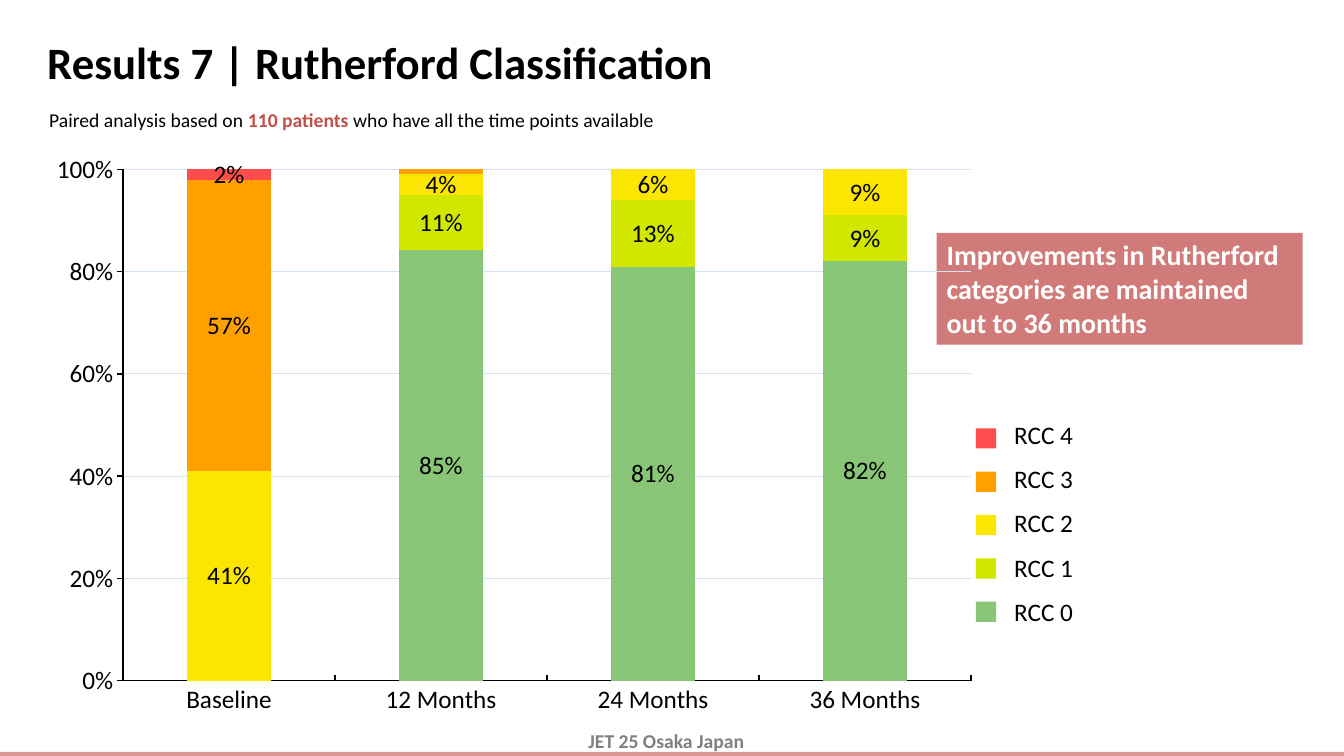
from dataclasses import dataclass

from lxml.etree import SubElement
from pptx import Presentation
from pptx.chart.data import CategoryChartData
from pptx.dml.color import RGBColor
from pptx.enum.chart import XL_CHART_TYPE, XL_TICK_MARK
from pptx.enum.shapes import MSO_SHAPE
from pptx.enum.text import MSO_ANCHOR, PP_ALIGN
from pptx.oxml import parse_xml
from pptx.oxml.ns import nsdecls, qn
from pptx.util import Inches, Pt

FONT = "Calibri"
BLACK = "000000"
CATEGORIES = ["Baseline", "12 Months", "24 Months", "36 Months"]
SMALLEST_LABEL = 0.02  # smaller shares carry no label


@dataclass
class RutherfordClass:
    label: str
    color: str
    shares: tuple[float, ...]


CLASSES = [
    RutherfordClass("RCC 0", "89C576", (0, 0.85, 0.81, 0.82)),
    RutherfordClass("RCC 1", "D1E700", (0, 0.11, 0.13, 0.09)),
    RutherfordClass("RCC 2", "FAE600", (0.41, 0.04, 0.06, 0.09)),
    RutherfordClass("RCC 3", "FF9F00", (0.57, 0.01, 0, 0)),
    RutherfordClass("RCC 4", "FF4C4C", (0.02, 0, 0, 0)),
]


def rgb(color: str) -> RGBColor:
    return RGBColor.from_string(color)


def style(font, size: float, color: str = BLACK, bold: bool = False) -> None:
    font.name, font.size, font.bold = FONT, Pt(size), bold
    font.color.rgb = rgb(color)


def add_rect(s, x: float, y: float, w: float, h: float, color: str):
    sp = s.shapes.add_shape(MSO_SHAPE.RECTANGLE, Inches(x), Inches(y), Inches(w), Inches(h))
    sp.shadow.inherit = False
    sp.fill.solid()
    sp.fill.fore_color.rgb = rgb(color)
    sp.line.fill.background()
    return sp


def add_text(s, x: float, y: float, w: float, h: float, lines: list[str], size: float,
             color: str = BLACK, bold: bool = False, wrap: bool = True):
    tf = s.shapes.add_textbox(Inches(x), Inches(y), Inches(w), Inches(h)).text_frame
    tf.word_wrap = wrap
    fill_text(tf, lines, size, color, bold)
    return tf


def fill_text(tf, lines: list[str], size: float, color: str, bold: bool) -> None:
    tf.text = "\n".join(lines)
    for p in tf.paragraphs:
        p.alignment = PP_ALIGN.LEFT
        style(p.font, size, color, bold)


def set_plot_area(chart, **fractions: float) -> None:
    """Fix the inner plot area as fractions of the chart frame."""
    plot_area = chart.plots[0]._element.getparent()
    for old in plot_area.findall(qn("c:layout")):
        plot_area.remove(old)
    layout = parse_xml(f"<c:layout {nsdecls('c')}/>")
    manual = SubElement(layout, qn("c:manualLayout"))
    settings = {"layoutTarget": "inner", "xMode": "edge", "yMode": "edge", **fractions}
    for name, value in settings.items():
        SubElement(manual, qn(f"c:{name}")).set("val", str(value))
    plot_area.insert(0, layout)


def label_series(series, shares: tuple[float, ...]) -> None:
    labels = series.data_labels
    labels.show_value = True
    labels.number_format, labels.number_format_is_linked = "0%", False
    style(labels.font, 18)
    hidden = [i for i, share in enumerate(shares) if share < SMALLEST_LABEL]
    for position, i in enumerate(hidden):
        labels._element.insert(position, parse_xml(
            f'<c:dLbl {nsdecls("c")}><c:idx val="{i}"/><c:delete val="1"/></c:dLbl>'))


def add_rutherford_chart(s) -> None:
    data = CategoryChartData(number_format="0%")
    data.categories = CATEGORIES
    for rcc in CLASSES:
        data.add_series(rcc.label, rcc.shares)
    chart = s.shapes.add_chart(XL_CHART_TYPE.COLUMN_STACKED_100, Inches(0.37), Inches(1.39),
                               Inches(9.45), Inches(5.83), data).chart
    chart.has_title = chart.has_legend = False
    style(chart.font, 18)
    set_plot_area(chart, x=0.09, y=0.05, w=0.89, h=0.87)

    plot = chart.plots[0]
    plot.gap_width, plot.overlap, plot.vary_by_categories = 150, 100, False
    for series, rcc in zip(plot.series, CLASSES):
        series.format.fill.solid()
        series.format.fill.fore_color.rgb = rgb(rcc.color)
        label_series(series, rcc.shares)

    ticks = [(chart.category_axis, XL_TICK_MARK.INSIDE), (chart.value_axis, XL_TICK_MARK.OUTSIDE)]
    for axis, tick in ticks:
        axis.major_tick_mark, axis.minor_tick_mark = tick, XL_TICK_MARK.NONE
        axis.format.line.color.rgb = rgb(BLACK)
        axis.format.line.width = Pt(1)
        style(axis.tick_labels.font, 18)

    axis = chart.value_axis
    axis.minimum_scale, axis.maximum_scale, axis.major_unit = 0, 1, 0.2
    axis.tick_labels.number_format = "0%"
    axis.tick_labels.number_format_is_linked = False
    axis.has_major_gridlines = True
    axis.major_gridlines.format.line.color.rgb = rgb("D4E3F4")
    axis.major_gridlines.format.line.width = Pt(0.75)


def main() -> None:
    prs = Presentation()
    prs.slide_width, prs.slide_height = Inches(13.33), Inches(7.5)
    s = prs.slides.add_slide(prs.slide_layouts[6])

    # Footer
    add_rect(s, 0, 7.46, 13.33, 0.04, "D99694")
    tf = add_text(s, 5.73, 7.18, 1.76, 0.34, ["JET 25 Osaka Japan"], 14, "808080", True, False)
    tf.paragraphs[0].alignment = PP_ALIGN.CENTER

    # Title and subtitle
    add_text(s, 0.37, 0.3, 12.6, 0.94, ["Results 7 | Rutherford Classification"], 32, bold=True)
    tf = add_text(s, 0.39, 1.02, 8.44, 0.34, ["Paired analysis based on "], 14)
    p = tf.paragraphs[0]
    r = p.add_run()
    r.text = "110 patients "
    r.font.bold, r.font.color.rgb = True, rgb("C1504C")
    p.add_run().text = "who have all the time points available"

    # Legend, top class first
    legend = CLASSES[::-1]
    tf = add_text(s, 9.96, 4.11, 0.79, 2.18, [rcc.label for rcc in legend], 18, wrap=False)
    for p in tf.paragraphs:
        p.space_before = p.space_after = Pt(5)
    for i, rcc in enumerate(legend):
        add_rect(s, 9.68, 4.25 + 0.43 * i, 0.2, 0.2, rcc.color)

    # Key message
    tf = add_rect(s, 9.29, 2.31, 3.63, 1.11, "D07B79").text_frame
    tf.word_wrap, tf.vertical_anchor = True, MSO_ANCHOR.TOP
    fill_text(tf, ["Improvements in Rutherford categories are maintained", "out to 36 months"],
              20, "FFFFFF", True)

    # Chart
    add_rutherford_chart(s)

    prs.save("out.pptx")


if __name__ == "__main__":
    main()
